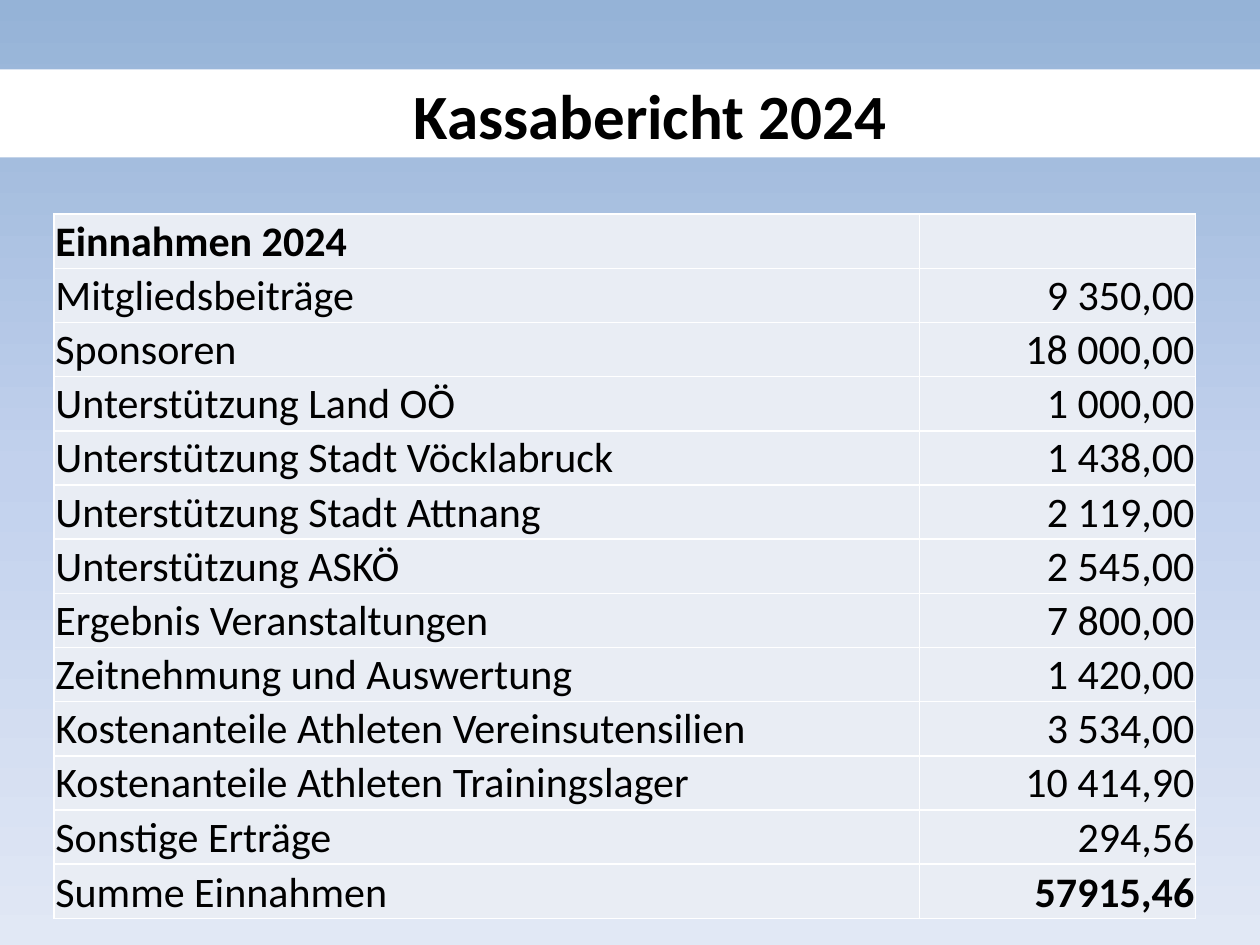
from copy import deepcopy
from dataclasses import dataclass

from lxml.etree import SubElement
from pptx import Presentation
from pptx.dml.color import RGBColor
from pptx.enum.shapes import MSO_SHAPE as Shape
from pptx.enum.text import MSO_ANCHOR as Anchor, PP_ALIGN as Align
from pptx.oxml.ns import qn
from pptx.util import Inches, Pt


@dataclass(frozen=True)
class Theme:
    font: str = "Calibri"
    text: str = "000000"
    band: str = "FFFFFF"
    cell: str = "E9EDF4"
    border: str = "FFFFFF"
    border_width: int = 1
    gradient: tuple = ((0, "95B3D7"), (0.5, "C2D1ED"), (1, "E1E8F5"))
    title_size: int = 36
    table_size: int = 24


THEME = Theme()
TITLE = "Kassabericht 2024"
INCOME = [
    ("Einnahmen 2024", ""),
    ("Mitgliedsbeiträge", "9 350,00"),
    ("Sponsoren", "18 000,00"),
    ("Unterstützung Land OÖ", "1 000,00"),
    ("Unterstützung Stadt Vöcklabruck", "1 438,00"),
    ("Unterstützung Stadt Attnang", "2 119,00"),
    ("Unterstützung ASKÖ", "2 545,00"),
    ("Ergebnis Veranstaltungen", "7 800,00"),
    ("Zeitnehmung und Auswertung", "1 420,00"),
    ("Kostenanteile Athleten Vereinsutensilien", "3 534,00"),
    ("Kostenanteile Athleten Trainingslager", "10 414,90"),
    ("Sonstige Erträge", "294,56"),
    ("Summe Einnahmen", "57915,46"),
]
COLUMN_WIDTHS = (6.87, 2.19)
ROW_HEIGHT = 0.43


def color(value):
    return RGBColor.from_string(value)


def write(frame, text, size, bold=False, align=Align.LEFT, anchor=Anchor.MIDDLE):
    frame.vertical_anchor = anchor
    para = frame.paragraphs[0]
    para.alignment = align
    span = para.add_run()
    span.text = text
    span.font.name = THEME.font
    span.font.size = Pt(size)
    span.font.bold = bold
    span.font.color.rgb = color(THEME.text)


def paint_background(page):
    fill = page.background.fill
    fill.gradient()
    fill.gradient_angle = 270
    stops = page.element.find(".//" + qn("a:gsLst"))
    stops.append(deepcopy(stops[-1]))
    for stop, (position, value) in zip(fill.gradient_stops, THEME.gradient):
        stop.position = position
        stop.color.rgb = color(value)


def add_title(page):
    """Place the title on a white band across the page."""
    title = page.shapes.title
    title.left, title.top = Inches(2.01), Inches(0.57)
    title.width, title.height = Inches(6.3), Inches(0.67)
    write(title.text_frame, TITLE, THEME.title_size, bold=True, align=Align.CENTER)

    band = page.shapes.add_shape(
        Shape.RECTANGLE, 0, Inches(0.55), Inches(10), Inches(0.7))
    band.shadow.inherit = False
    band.fill.solid()
    band.fill.fore_color.rgb = color(THEME.band)
    band.line.fill.background()
    title.element.addprevious(band.element)


def style_cell(cell):
    """Give the cell its fill and a thin line on all four sides."""
    cell.fill.solid()
    cell.fill.fore_color.rgb = color(THEME.cell)
    properties = cell._tc.get_or_add_tcPr()
    for index, side in enumerate(("a:lnL", "a:lnR", "a:lnT", "a:lnB")):
        line = SubElement(properties, qn(side), w=str(Pt(THEME.border_width)))
        solid = SubElement(line, qn("a:solidFill"))
        SubElement(solid, qn("a:srgbClr"), val=THEME.border)
        properties.insert(index, line)


def add_income_table(page):
    last = len(INCOME) - 1
    table = page.shapes.add_table(
        len(INCOME), len(COLUMN_WIDTHS), Inches(0.43), Inches(1.7),
        Inches(sum(COLUMN_WIDTHS)), Inches(ROW_HEIGHT * len(INCOME))).table
    table.first_row = table.horz_banding = False
    for column, width in zip(table.columns, COLUMN_WIDTHS):
        column.width = Inches(width)
    for row, texts in enumerate(INCOME):
        table.rows[row].height = Inches(ROW_HEIGHT)
        for column, text in enumerate(texts):
            cell = table.cell(row, column)
            style_cell(cell)
            if not text:
                continue
            cell.margin_left = cell.margin_right = cell.margin_top = Inches(0.01)
            cell.margin_bottom = 0
            anchor = Anchor.BOTTOM if row == last else Anchor.MIDDLE
            cell.vertical_anchor = anchor
            write(cell.text_frame, text, THEME.table_size,
                  bold=(row, column) in ((0, 0), (last, 1)),
                  align=Align.RIGHT if column else Align.LEFT, anchor=anchor)


def main():
    deck = Presentation()
    deck.slide_width, deck.slide_height = Inches(10), Inches(7.5)
    page = deck.slides.add_slide(deck.slide_layouts[5])
    paint_background(page)
    add_title(page)
    add_income_table(page)
    deck.save("out.pptx")


if __name__ == "__main__":
    main()
